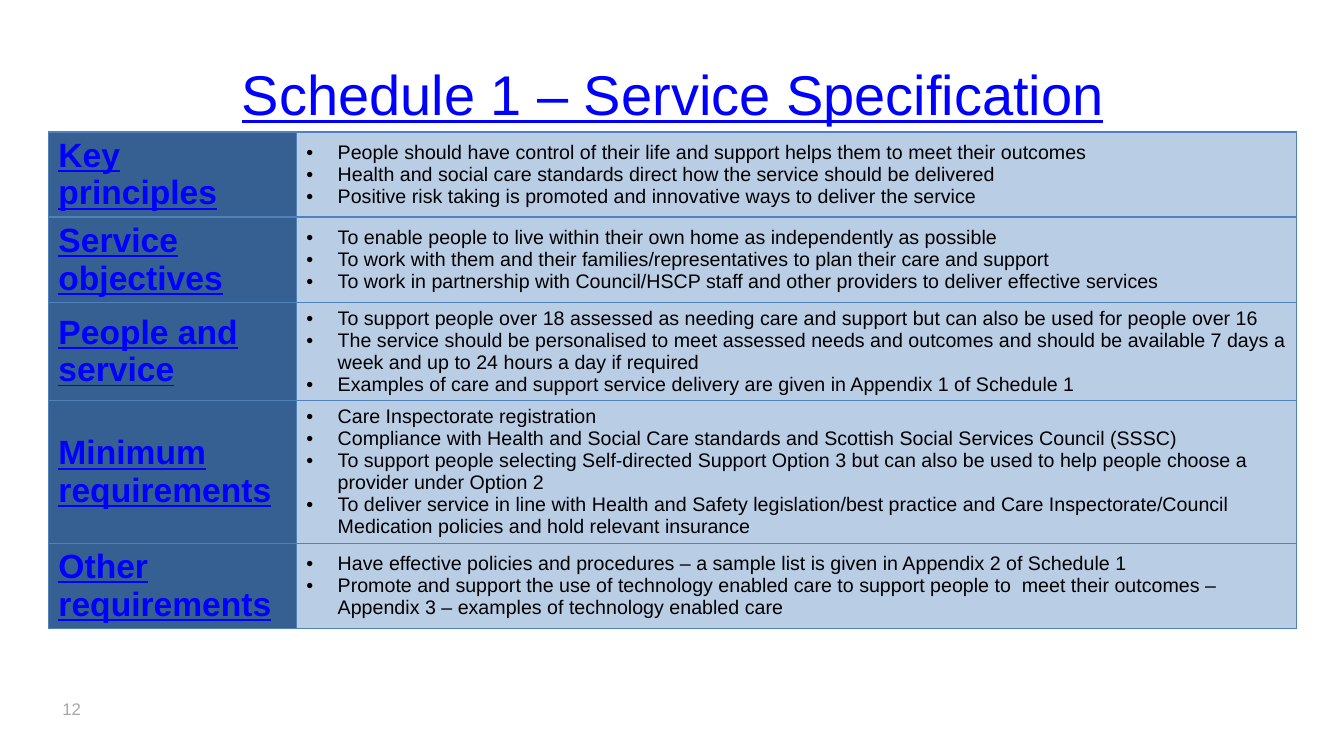
from dataclasses import dataclass

from lxml.etree import SubElement
from pptx import Presentation
from pptx.dml.color import RGBColor
from pptx.enum.text import MSO_ANCHOR, MSO_AUTO_SIZE, PP_ALIGN
from pptx.oxml.ns import qn
from pptx.util import Inches, Pt


@dataclass(frozen=True)
class Theme:
    font: str = "Arial"
    link: str = "0000FF"
    body: str = "000000"
    muted: str = "A6A6A6"
    heading_fill: str = "376092"
    detail_fill: str = "B9CDE5"
    border: str = "4F81BD"
    title_size: int = 40
    heading_size: int = 24
    detail_size: int = 14
    number_size: int = 12


THEME = Theme()
COLUMN_WIDTHS = (2.46, 9.92)
BULLET_INDENT = Inches(0.31)

# Heading, row height in inches, details
SPECIFICATION = [
    ("Key principles", 0.84, [
        "People should have control of their life and support helps them to meet their outcomes",
        "Health and social care standards direct how the service should be delivered",
        "Positive risk taking is promoted and innovative ways to deliver the service",
    ]),
    ("Service objectives", 0.84, [
        "To enable people to live within their own home as independently as possible",
        "To work with them and their families/representatives to plan their care and support",
        "To work in partnership with Council/HSCP staff and other providers to deliver "
        "effective services",
    ]),
    ("People and service", 0.98, [
        "To support people over 18 assessed as needing care and support but can also be used "
        "for people over 16",
        "The service should be personalised to meet assessed needs and outcomes and should be "
        "available 7 days a week and up to 24 hours a day if required",
        "Examples of care and support service delivery are given in Appendix 1 of Schedule 1",
    ]),
    ("Minimum requirements", 1.41, [
        "Care Inspectorate registration",
        "Compliance with Health and Social Care standards and Scottish Social Services Council "
        "(SSSC)",
        "To support people selecting Self-directed Support Option 3 but can also be used to "
        "help people choose a provider under Option 2",
        "To deliver service in line with Health and Safety legislation/best practice and Care "
        "Inspectorate/Council Medication policies and hold relevant insurance",
    ]),
    ("Other requirements", 0.84, [
        "Have effective policies and procedures – a sample list is given in Appendix 2 of "
        "Schedule 1",
        "Promote and support the use of technology enabled care to support people to  meet "
        "their outcomes – Appendix 3 – examples of technology enabled care",
    ]),
]


def format_runs(paragraph, size, color, bold=False, underline=False):
    for run in paragraph.runs:
        run.font.name = THEME.font
        run.font.size = Pt(size)
        run.font.bold = bold
        run.font.underline = underline
        run.font.color.rgb = RGBColor.from_string(color)


def add_bullet(paragraph):
    properties = paragraph._p.get_or_add_pPr()
    properties.set("marL", str(BULLET_INDENT))
    properties.set("indent", str(-BULLET_INDENT))
    SubElement(properties, qn("a:buFont"), typeface=THEME.font)
    SubElement(properties, qn("a:buChar"), char="•")


def style_cell(cell, fill):
    """Border all four sides, then fill the cell and centre it vertically."""
    properties = cell._tc.get_or_add_tcPr()
    for side in ("lnL", "lnR", "lnT", "lnB"):
        line = SubElement(properties, qn(f"a:{side}"), w=str(Pt(1)))
        SubElement(SubElement(line, qn("a:solidFill")), qn("a:srgbClr"), val=THEME.border)
    cell.fill.solid()
    cell.fill.fore_color.rgb = RGBColor.from_string(fill)
    cell.vertical_anchor = MSO_ANCHOR.MIDDLE


def place_title(slide, left, top, width, height):
    title = slide.shapes.title
    title.left, title.top, title.width, title.height = map(Inches, (left, top, width, height))
    frame = title.text_frame
    frame.text = "Schedule 1 – Service Specification"
    frame.auto_size = MSO_AUTO_SIZE.NONE
    frame.vertical_anchor = MSO_ANCHOR.MIDDLE
    frame.paragraphs[0].alignment = PP_ALIGN.CENTER
    format_runs(frame.paragraphs[0], THEME.title_size, THEME.link, underline=True)


def add_specification(slide, left, top):
    width = sum(COLUMN_WIDTHS)
    height = sum(row_height for _, row_height, _ in SPECIFICATION)
    table = slide.shapes.add_table(
        len(SPECIFICATION), len(COLUMN_WIDTHS), *map(Inches, (left, top, width, height))).table
    table.first_row = table.horz_banding = False
    for column, column_width in zip(table.columns, COLUMN_WIDTHS):
        column.width = Inches(column_width)
    for row, (heading, row_height, details) in zip(table.rows, SPECIFICATION):
        row.height = Inches(row_height)
        heading_cell, detail_cell = row.cells
        style_cell(heading_cell, THEME.heading_fill)
        heading_cell.text_frame.text = heading
        format_runs(heading_cell.text_frame.paragraphs[0], THEME.heading_size, THEME.link,
                    bold=True, underline=True)
        style_cell(detail_cell, THEME.detail_fill)
        detail_cell.text_frame.text = "\n".join(details)
        for paragraph in detail_cell.text_frame.paragraphs:
            add_bullet(paragraph)
            format_runs(paragraph, THEME.detail_size, THEME.body)


def add_page_number(slide, left, top, width, height):
    page_number = slide.shapes.add_textbox(*map(Inches, (left, top, width, height)))
    frame = page_number.text_frame
    frame.word_wrap = True
    frame.text = "12"
    format_runs(frame.paragraphs[0], THEME.number_size, THEME.muted)


def main():
    presentation = Presentation()
    presentation.slide_width = Inches(13.33)
    presentation.slide_height = Inches(7.5)
    slide = presentation.slides.add_slide(presentation.slide_layouts.get_by_name("Title Only"))
    place_title(slide, 0.67, 0.3, 12, 1.25)
    add_specification(slide, 0.48, 1.31)
    add_page_number(slide, 0.52, 6.88, 2.19, 0.3)
    presentation.save("out.pptx")


if __name__ == "__main__":
    main()
